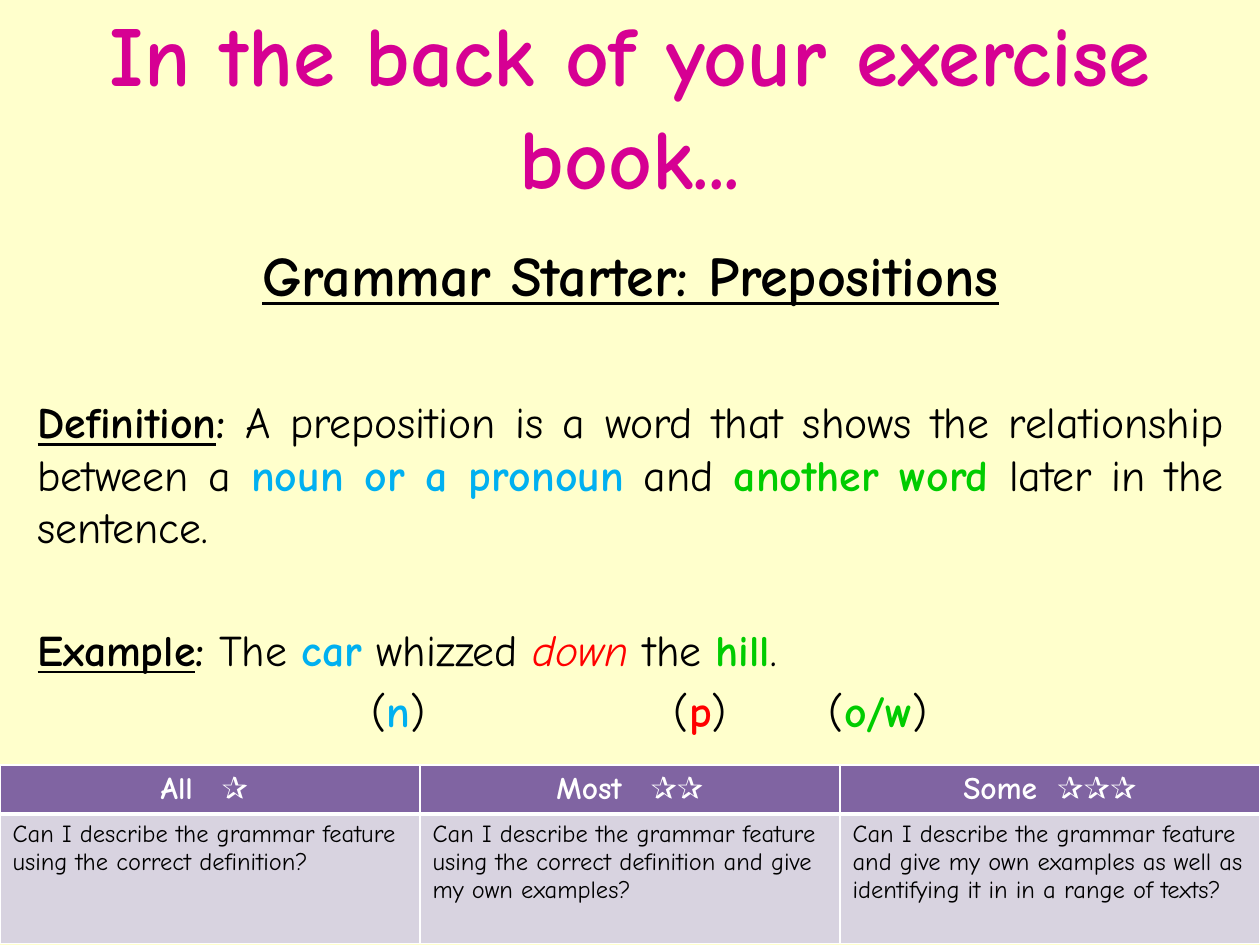
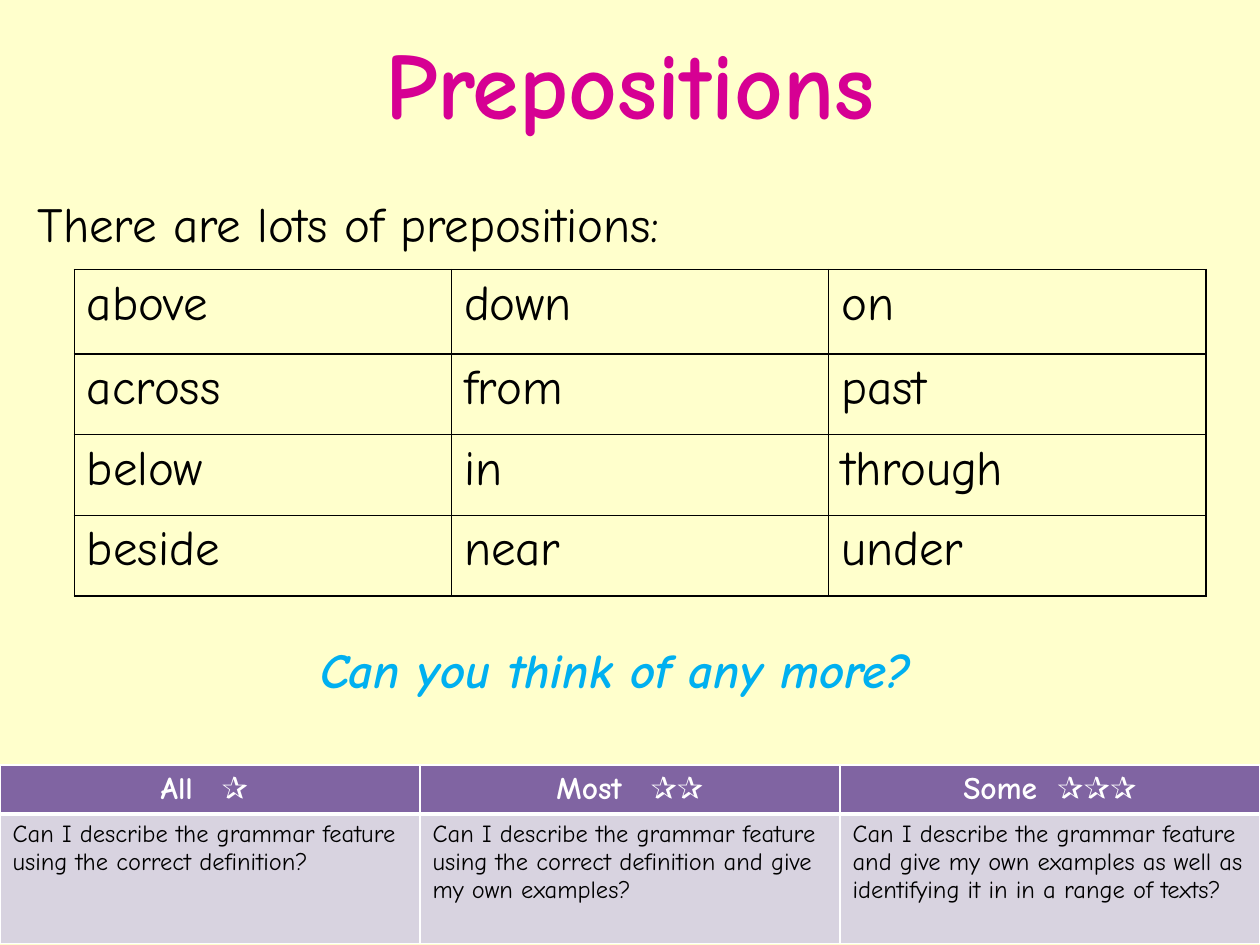
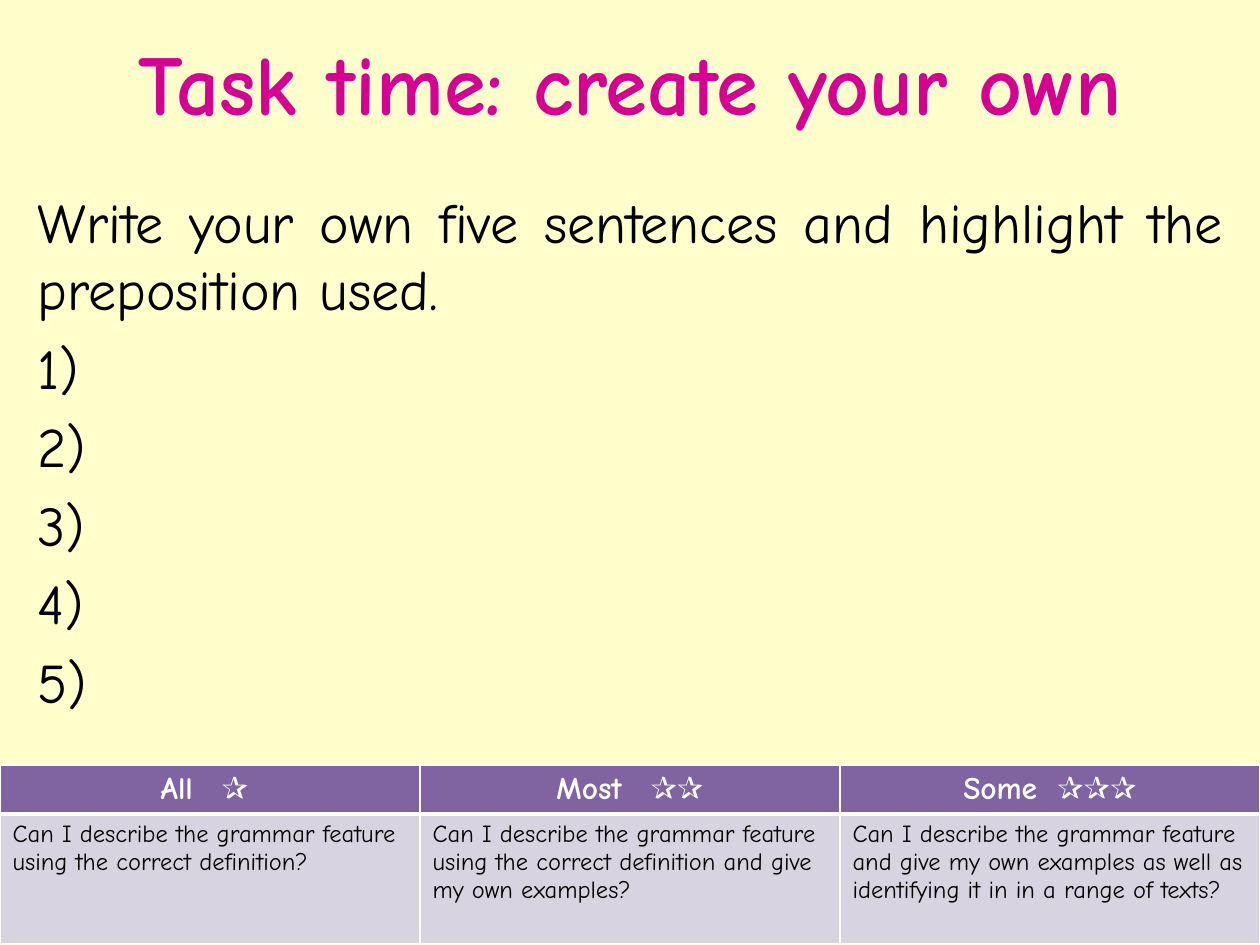
from dataclasses import dataclass
from typing import NamedTuple

from lxml import etree
from pptx import Presentation
from pptx.dml.color import RGBColor
from pptx.enum.text import MSO_ANCHOR, MSO_AUTO_SIZE, PP_ALIGN
from pptx.oxml.ns import qn
from pptx.util import Inches, Pt

LEFT, CENTER, JUSTIFY = PP_ALIGN.LEFT, PP_ALIGN.CENTER, PP_ALIGN.JUSTIFY
MIDDLE = MSO_ANCHOR.MIDDLE
NO_AUTOFIT = MSO_AUTO_SIZE.NONE

FONT = "Comic Neue"
CREAM, PINK, BLACK, WHITE = "FFFFCC", "D60093", "000000", "FFFFFF"
BLUE, GREEN, RED = "00B0F0", "00CC00", "FF0000"
PURPLE, LILAC = "8064A2", "D8D3E0"
TITLE_ONLY = 5


class Span(NamedTuple):
    """A stretch of text in one format; tracking is extra points per letter."""

    text: str
    color: str = BLACK
    bold: bool = False
    italic: bool = False
    underline: bool = False
    tracking: float = 0


@dataclass
class Para:
    """A paragraph with its size, alignment, space before and tab stops."""

    spans: list[Span]
    size: float
    align: PP_ALIGN = LEFT
    before: float = 0
    tabs: tuple[float, ...] = ()


class Area(NamedTuple):
    """A rectangle in inches."""

    left: float
    top: float
    width: float
    height: float


class Goal(NamedTuple):
    """A level of the success criteria."""

    level: str
    tracking: float
    stars: str
    question: str


class Border(NamedTuple):
    """A cell border: side code, colour and width in points."""

    side: str
    color: str
    width: float


GOALS = [
    Goal("All", 10, "✰ ", "Can I describe the grammar feature using the correct definition?"),
    Goal("Most", 10, "✰✰", "Can I describe the grammar feature using the correct definition "
         "and give my own examples?"),
    Goal("Some", 5, "✰✰✰", "Can I describe the grammar feature and give my own examples "
         "as well as identifying it in in a range of texts?"),
]
PREPOSITIONS = [
    ["above", "down", "on"],
    ["across", "from", "past"],
    ["below", "in", "through"],
    ["beside", "near", "under"],
]
BLACK_GRID = [Border(side, BLACK, 1) for side in "LRTB"]
HEADER_GRID = [Border(side, WHITE, 3 if side == "B" else 1) for side in "LRTB"]
QUESTION_GRID = [Border(side, WHITE, 3 if side == "T" else 1) for side in "LRTB"]


def rgb(color: str) -> RGBColor:
    """Turn a hex string into a colour."""
    return RGBColor.from_string(color)


def set_values(target, values: dict) -> None:
    """Set each named attribute of the target."""
    for name, value in values.items():
        setattr(target, name, value)


def write(frame, paras: list[Para]) -> None:
    """Fill a text frame with paragraphs."""
    for index, item in enumerate(paras):
        para = frame.paragraphs[0] if index == 0 else frame.add_paragraph()
        set_values(para, {"alignment": item.align, "space_before": Pt(item.before)})
        if item.tabs:
            stops = etree.SubElement(para._p.get_or_add_pPr(), qn("a:tabLst"))
            for position in item.tabs:
                etree.SubElement(stops, qn("a:tab"), pos=str(Inches(position)), algn="l")
        for span in item.spans:
            run = para.add_run()
            run.text = span.text
            set_values(run.font, {"name": FONT, "size": Pt(item.size), "bold": span.bold,
                                  "italic": span.italic, "underline": span.underline})
            run.font.color.rgb = rgb(span.color)
            if span.tracking:
                run._r.get_or_add_rPr().set("spc", str(round(span.tracking * 100)))


def place(shape, area: Area) -> None:
    """Move and size a shape."""
    set_values(shape, {name: Inches(value) for name, value in area._asdict().items()})


def add_body(page, area: Area, paras: list[Para]) -> None:
    """Add a wrapping text box."""
    box = page.shapes.add_textbox(*map(Inches, area))
    box.text_frame.word_wrap = True
    write(box.text_frame, paras)


def format_cell(cell, para: Para, borders: list[Border], fill: str = "") -> None:
    """Write a cell and give it borders and a fill."""
    write(cell.text_frame, [para])
    properties = cell._tc.get_or_add_tcPr()
    for border in borders:
        line = etree.SubElement(properties, qn(f"a:ln{border.side}"), w=str(Pt(border.width)))
        solid = etree.SubElement(line, qn("a:solidFill"))
        etree.SubElement(solid, qn("a:srgbClr"), val=border.color)
    if fill:
        cell.fill.solid()
        cell.fill.fore_color.rgb = rgb(fill)
    else:
        cell.fill.background()


def add_grid(page, area: Area, columns: int, heights: list[float]):
    """Add a plain table with equal columns and the given row heights."""
    table = page.shapes.add_table(len(heights), columns, *map(Inches, area)).table
    set_values(table, {"first_row": False, "horz_banding": False})
    for column in table.columns:
        column.width = Inches(area.width / columns)
    for row, height in zip(table.rows, heights):
        row.height = Inches(height)
    return table


def add_goals(page) -> None:
    """Add the success criteria along the foot of the slide."""
    table = add_grid(page, Area(0, 6.07, 10, 1.36), len(GOALS), [0.33, 1.03])
    for column, goal in enumerate(GOALS):
        heading = [Span(goal.level, WHITE, True),
                   Span(" ", WHITE, True, tracking=goal.tracking),
                   Span(goal.stars, WHITE, True)]
        format_cell(table.cell(0, column), Para(heading, 18, CENTER), HEADER_GRID, PURPLE)
        format_cell(table.cell(1, column), Para([Span(goal.question)], 14), QUESTION_GRID, LILAC)


def add_page(deck, title: str, size: float, height: float = 1.25):
    """Add a slide with its title and success criteria."""
    page = deck.slides.add_slide(deck.slide_layouts[TITLE_ONLY])
    heading = page.shapes.title
    place(heading, Area(0, 0.02, 10, height))
    set_values(heading.text_frame, {"word_wrap": True, "auto_size": NO_AUTOFIT,
                                    "vertical_anchor": MIDDLE})
    write(heading.text_frame, [Para([Span(title, PINK, True)], size, CENTER)])
    add_goals(page)
    return page


def add_definition_page(deck) -> None:
    """Define prepositions and label an example."""
    page = add_page(deck, "In the back of your exercise book...", 48.6, 1.61)
    definition = [
        Span("Definition", bold=True, underline=True), Span(":", bold=True),
        Span(" A preposition is a word that shows the relationship between a "),
        Span("noun or a pronoun", BLUE, True), Span(" and "),
        Span("another word ", GREEN, True), Span("later in the sentence."),
    ]
    example = [
        Span("Example", bold=True, underline=True), Span(":", bold=True), Span(" The "),
        Span("car", BLUE, True), Span(" whizzed "), Span("down", RED, italic=True),
        Span(" the "), Span("hill", GREEN, True), Span("."),
    ]
    labels = [
        Span("\t("), Span("n", BLUE, True), Span(")\t("), Span("p", RED, True),
        Span(")\t("), Span("o/w", GREEN, True), Span(")"),
    ]
    starter = Span("Grammar Starter: Prepositions", bold=True, underline=True)
    add_body(page, Area(0.2, 1.86, 9.61, 4.84), [
        Para([starter], 32, CENTER, 6.4),
        Para(definition, 25, JUSTIFY, 50),
        Para(example, 25, JUSTIFY, 40),
        Para(labels, 25, LEFT, 5, (2.65, 5.05, 6.28)),
    ])


def add_list_page(deck) -> None:
    """List common prepositions in a grid."""
    page = add_page(deck, "Prepositions", 54)
    add_body(page, Area(0.2, 1.49, 9.37, 4.95), [
        Para([Span("There are lots of prepositions:")], 28, LEFT, 5.6),
        Para([Span("Can you think of any more?", BLUE, True, True)], 28, CENTER, 221),
    ])
    table = add_grid(page, Area(0.59, 2.14, 8.98, 2.59), 3, [0.67, 0.64, 0.64, 0.64])
    for row, words in enumerate(PREPOSITIONS):
        for column, word in enumerate(words):
            format_cell(table.cell(row, column), Para([Span(word)], 28), BLACK_GRID)


def add_task_page(deck) -> None:
    """Set the writing task with five numbered lines."""
    page = add_page(deck, "Task time: create your own", 48.6)
    lines = ["Write your own five sentences and highlight the preposition used."]
    lines += [f"{number})" for number in range(1, 6)]
    add_body(page, Area(0.2, 1.44, 9.61, 4.95),
             [Para([Span(line)], 32, JUSTIFY, 6.4) for line in lines])


def main() -> None:
    """Build and save the deck."""
    deck = Presentation()
    set_values(deck, {"slide_width": Inches(10), "slide_height": Inches(7.5)})
    background = deck.slide_master.background.fill
    background.solid()
    background.fore_color.rgb = rgb(CREAM)
    add_definition_page(deck)
    add_list_page(deck)
    add_task_page(deck)
    deck.save("out.pptx")


if __name__ == "__main__":
    main()
